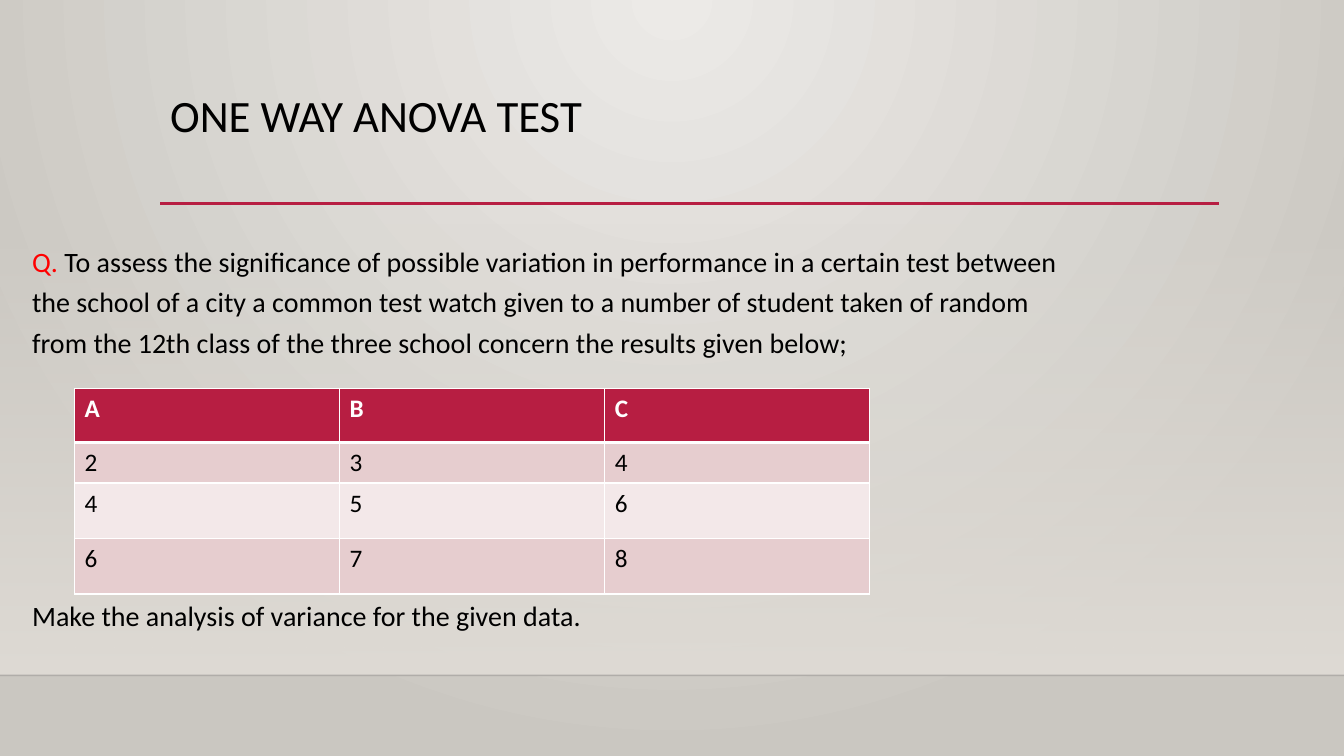
from dataclasses import dataclass
from typing import Any, Optional

from pptx import Presentation
from pptx.dml.color import RGBColor
from pptx.enum.shapes import MSO_CONNECTOR as Connector, MSO_SHAPE as Shape
from pptx.enum.text import MSO_ANCHOR as Anchor
from pptx.oxml import parse_xml
from pptx.oxml.ns import nsdecls, qn
from pptx.util import Cm, Pt


@dataclass(frozen=True)
class Theme:
    font: str = "Calibri"
    title_size: float = 32
    body_size: float = 20
    cell_size: float = 18
    text: str = "000000"
    accent: str = "B71E42"
    mark: str = "FF0000"
    white: str = "FFFFFF"
    bands: tuple = ("E6CDCF", "F3E8E9")
    glow: str = "ECEAE7"
    edge: str = "CAC7C1"
    wall: str = "DFDBD5"
    shelf: str = "000001"


@dataclass(frozen=True)
class Run:
    text: str
    color: str


@dataclass(frozen=True)
class TextBlock:
    box: tuple
    runs: tuple
    size: float
    spacing: float


@dataclass(frozen=True)
class Rule:
    left: float
    right: float
    y: float
    color: str
    width: float
    opacity: Optional[int] = None


T = Theme()
WIDTH, HEIGHT = 33.87, 19.05
SHELF_Y = 17.02
PANEL_TOP = 5.61

RULES = (
    Rule(0, WIDTH, SHELF_Y, T.shelf, 1, opacity=20),
    Rule(4.04, 30.73, 5.13, T.accent, 2.5),
)
QUESTION = (
    "To assess the significance of possible variation in performance in a certain test "
    "between the school of a city a common test watch given to a number of student taken "
    "of random from the 12th class of the three school concern the results given below;"
)
BLOCKS = (
    TextBlock((4.04, 2.24, 26.67, 2.92), (Run("ONE WAY ANOVA TEST", T.text),), T.title_size, 0.9),
    TextBlock((0.56, 5.87, 27.15, 3.5), (Run("Q. ", T.mark), Run(QUESTION, T.text)), T.body_size, 1.2),
    TextBlock((0.56, 14.78, 27.15, 1.4),
              (Run("Make the analysis of variance for the given data.", T.text),), T.body_size, 1.2),
)
SCORES = (("A", "B", "C"), ("2", "3", "4"), ("4", "5", "6"), ("6", "7", "8"))
TABLE_LEFT, TABLE_TOP, COLUMN_WIDTH = 1.88, 9.78, 6.68
ROW_HEIGHTS = (1.37, 1.02, 1.4, 1.4)


def set_format(target: Any, values: dict) -> None:
    for name, value in values.items():
        setattr(target, name, value)


def set_font(font: Any, size: float, color: str, bold: bool = False) -> None:
    set_format(font, {"name": T.font, "size": Pt(size), "bold": bold})
    font.color.rgb = RGBColor.from_string(color)


def set_gradient(fill: Any, owner: Any, stops: tuple, direction: str) -> None:
    """Fill owner from (color, opacity) stops; direction is the a:lin or a:path element."""
    fill.gradient()
    grad = owner.find(".//" + qn("a:gradFill"))
    last = len(stops) - 1
    marks = "".join(
        f'<a:gs pos="{100000 * i // last}"><a:srgbClr val="{color}">'
        f'<a:alpha val="{opacity * 1000}"/></a:srgbClr></a:gs>'
        for i, (color, opacity) in enumerate(stops)
    )
    grad.getparent().replace(grad, parse_xml(
        f'<a:gradFill {nsdecls("a")} rotWithShape="1"><a:gsLst>{marks}</a:gsLst>{direction}</a:gradFill>'))


def draw_backdrop(slide: Any) -> None:
    set_gradient(
        slide.background.fill, slide.element, ((T.glow, 100), (T.edge, 100)),
        '<a:path path="circle"><a:fillToRect l="43000" t="0" r="43000" b="100000"/></a:path>')
    sp = slide.shapes.add_shape(
        Shape.RECTANGLE, Cm(0), Cm(PANEL_TOP), Cm(WIDTH), Cm(SHELF_Y - PANEL_TOP))
    sp.shadow.inherit = False
    sp.line.fill.background()
    set_gradient(sp.fill, sp.element, ((T.wall, 0), (T.wall, 100)), '<a:lin ang="5400000" scaled="0"/>')


def draw_rule(slide: Any, rule: Rule) -> None:
    line = slide.shapes.add_connector(
        Connector.STRAIGHT, Cm(rule.left), Cm(rule.y), Cm(rule.right), Cm(rule.y))
    line.line.width = Pt(rule.width)
    line.line.color.rgb = RGBColor.from_string(rule.color)
    props = line.element.spPr
    if rule.opacity is not None:
        color = props.find(".//" + qn("a:srgbClr"))
        color.append(parse_xml(f'<a:alpha {nsdecls("a")} val="{rule.opacity * 1000}"/>'))
    props.append(parse_xml(f'<a:effectLst {nsdecls("a")}/>'))


def draw_text(slide: Any, block: TextBlock) -> None:
    tf = slide.shapes.add_textbox(*map(Cm, block.box)).text_frame
    set_format(tf, {"word_wrap": True, "vertical_anchor": Anchor.TOP})
    p = tf.paragraphs[0]
    p.line_spacing = block.spacing
    for run in block.runs:
        r = p.add_run()
        r.text = run.text
        set_font(r.font, block.size, run.color)


def set_borders(cell: Any, widths: dict) -> None:
    props = cell._tc.get_or_add_tcPr()
    for i, (side, width) in enumerate(widths.items()):
        props.insert(i, parse_xml(
            f'<a:ln{side} {nsdecls("a")} w="{Pt(width)}"><a:solidFill>'
            f'<a:srgbClr val="{T.white}"/></a:solidFill></a:ln{side}>'))


def draw_table(slide: Any) -> None:
    columns = len(SCORES[0])
    table = slide.shapes.add_table(
        len(SCORES), columns, Cm(TABLE_LEFT), Cm(TABLE_TOP),
        Cm(columns * COLUMN_WIDTH), Cm(sum(ROW_HEIGHTS))).table
    table.horz_banding = False
    for column in table.columns:
        column.width = Cm(COLUMN_WIDTH)
    for i, (row, height, values) in enumerate(zip(table.rows, ROW_HEIGHTS, SCORES)):
        row.height = Cm(height)
        header = i == 0
        fill = T.accent if header else T.bands[(i - 1) % 2]
        for cell, value in zip(row.cells, values):
            cell.text = value
            cell.fill.solid()
            cell.fill.fore_color.rgb = RGBColor.from_string(fill)
            r = cell.text_frame.paragraphs[0].runs[0]
            set_font(r.font, T.cell_size, T.white if header else T.text, bold=header)
            set_borders(cell, {"L": 1, "R": 1, "T": 3 if i == 1 else 1, "B": 3 if header else 1})


def main() -> None:
    prs = Presentation()
    set_format(prs, {"slide_width": Cm(WIDTH), "slide_height": Cm(HEIGHT)})
    slide = prs.slides.add_slide(prs.slide_layouts[6])
    draw_backdrop(slide)
    for rule in RULES:
        draw_rule(slide, rule)
    for block in BLOCKS:
        draw_text(slide, block)
    draw_table(slide)
    prs.save("out.pptx")


if __name__ == "__main__":
    main()
